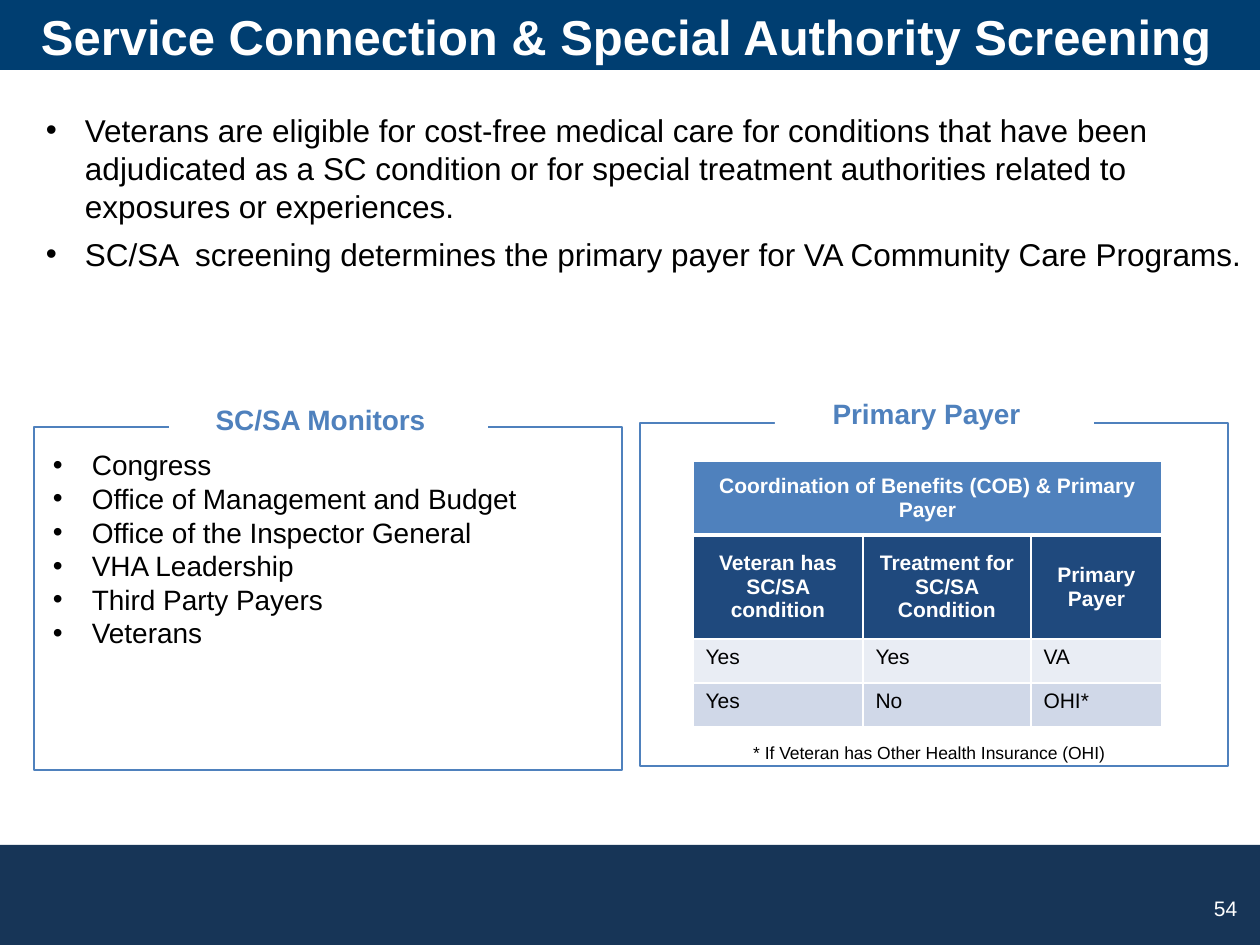
import pptx
import pptx.util
import pptx.dml.color
import pptx.enum.shapes
import pptx.enum.text
import pptx.oxml
import pptx.oxml.ns

RGB = pptx.dml.color.RGBColor
ALIGN = pptx.enum.text.PP_ALIGN
ANCHOR = pptx.enum.text.MSO_ANCHOR
WHITE, BLACK = RGB(255, 255, 255), RGB(0, 0, 0)
TITLE_BLUE = RGB(0x00, 0x3E, 0x71)
FOOTER_BLUE = RGB(0x17, 0x35, 0x57)
ACCENT = RGB(0x4F, 0x81, 0xBD)
DARK_BLUE = RGB(0x1F, 0x49, 0x7D)
PALE, PALER = RGB(0xD0, 0xD8, 0xE8), RGB(0xE9, 0xED, 0xF4)

TITLE = "Service Connection & Special Authority Screening"
INTRO = [
    "Veterans are eligible for cost-free medical care for conditions that have been "
    "adjudicated as a SC condition or for special treatment authorities related to "
    "exposures or experiences.",
    "SC/SA  screening determines the primary payer for VA Community Care Programs.",
]
MONITORS = ["Congress", "Office of Management and Budget", "Office of the Inspector General",
            "VHA Leadership", "Third Party Payers", "Veterans"]
PAYER_ROWS = [
    ["Coordination of Benefits (COB) & Primary Payer", "", ""],
    ["Veteran has SC/SA condition", "Treatment for SC/SA Condition", "Primary Payer"],
    ["Yes", "Yes", "VA"],
    ["Yes", "No", "OHI*"],
]
ROW_FILLS = [ACCENT, DARK_BLUE, PALER, PALE]
ROW_HEIGHTS = [74, 104, 44, 44]
COLUMN_WIDTHS = [170, 168, 131]
FOOTNOTE = "* If Veteran has Other Health Insurance (OHI)"
PAGE_NUMBER = "54"

# heading, frame left and top, heading left and top
PANELS = [("SC/SA Monitors", 34, 427, 169, 397),
          ("Primary Payer", 640, 423, 775, 391)]
FRAME_SIZE = (588, 343)
HEADING_SIZE = (319, 47)

SLIDE_W, SLIDE_H = 1260, 945
HANGING = 39
INSETS = (13, 6, 13, 6)


def px(length):
    return pptx.util.Emu(round(length * 914400 / 126))


def place(part, *box):
    part.left, part.top, part.width, part.height = map(px, box)


def add_bullet(paragraph):
    properties = paragraph._p.get_or_add_pPr()
    properties.set("marL", str(px(HANGING)))
    properties.set("indent", str(-px(HANGING)))
    for tag, key, value in (("buFont", "typeface", "Arial"), ("buChar", "char", "•")):
        pptx.oxml.ns.qn("a:" + tag)
        properties.append(pptx.oxml.parse_xml(
            f'<a:{tag} {pptx.oxml.ns.nsdecls("a")} {key}="{value}"/>'))


def write(frame, lines, size, color=BLACK, bold=False, align=ALIGN.LEFT,
          anchor=ANCHOR.TOP, insets=INSETS, bullets=False, after=0):
    settings = {"word_wrap": True, "vertical_anchor": anchor,
                "auto_size": pptx.enum.text.MSO_AUTO_SIZE.NONE}
    sides = ("margin_left", "margin_top", "margin_right", "margin_bottom")
    settings.update(zip(sides, map(px, insets)))
    for key, value in settings.items():
        setattr(frame, key, value)
    for i, line in enumerate(lines):
        paragraph = frame.paragraphs[0] if i == 0 else frame.add_paragraph()
        paragraph.text = line
        paragraph.alignment = align
        paragraph.space_before = pptx.util.Pt(0)
        paragraph.space_after = pptx.util.Pt(after)
        if bullets:
            add_bullet(paragraph)
        font = paragraph.runs[0].font
        font.color.rgb = color
        for key, value in {"name": "Arial", "size": pptx.util.Pt(size), "bold": bold}.items():
            setattr(font, key, value)


def add_rectangle(slide, box, fill=None, line=None):
    shape = slide.shapes.add_shape(pptx.enum.shapes.MSO_SHAPE.RECTANGLE, *map(px, box))
    shape.shadow.inherit = False
    if fill is None:
        shape.fill.background()
    else:
        shape.fill.solid()
        shape.fill.fore_color.rgb = fill
    if line is None:
        shape.line.fill.background()
    else:
        shape.line.color.rgb = line
        shape.line.width = pptx.util.Pt(1.5)
    return shape


def add_text(slide, box, lines, size, **options):
    write(slide.shapes.add_textbox(*map(px, box)).text_frame, lines, size, **options)


def add_borders(cell, widths):
    """Draw white left, right, top and bottom borders with widths in points."""
    for side, width in zip("LRTB", widths):
        cell._tc.get_or_add_tcPr().append(pptx.oxml.parse_xml(
            f'<a:ln{side} {pptx.oxml.ns.nsdecls("a")} w="{pptx.util.Pt(width)}">'
            f'<a:solidFill><a:srgbClr val="{WHITE}"/></a:solidFill></a:ln{side}>'))


def add_payer_table(slide, left, top):
    box = (left, top, sum(COLUMN_WIDTHS), sum(ROW_HEIGHTS))
    table = slide.shapes.add_table(len(ROW_HEIGHTS), len(COLUMN_WIDTHS), *map(px, box)).table
    for column, width in zip(table.columns, COLUMN_WIDTHS):
        column.width = px(width)
    for r, (texts, fill, height) in enumerate(zip(PAYER_ROWS, ROW_FILLS, ROW_HEIGHTS)):
        table.rows[r].height = px(height)
        heading = r < 2
        for c, text in enumerate(texts):
            cell = table.cell(r, c)
            add_borders(cell, (1, 1, 3 if r == 1 else 1, 3 if r == 0 else 1))
            cell.fill.solid()
            cell.fill.fore_color.rgb = fill
            if text:
                write(cell.text_frame, [text], 12, WHITE if heading else BLACK, heading,
                      ALIGN.CENTER if heading else ALIGN.LEFT)
            cell.vertical_anchor = ANCHOR.MIDDLE if heading else ANCHOR.TOP
    table.cell(0, 0).merge(table.cell(0, len(COLUMN_WIDTHS) - 1))


def main():
    deck = pptx.Presentation()
    deck.slide_width, deck.slide_height = px(SLIDE_W), px(SLIDE_H)
    slide = deck.slides.add_slide(deck.slide_layouts[1])

    for top, height, color in ((0, 70, TITLE_BLUE), (845, 100, FOOTER_BLUE)):
        band = add_rectangle(slide, (0, top, SLIDE_W, height), fill=color)
        slide.shapes._spTree.insert(2, band._element)  # behind the title

    title, intro = slide.shapes.title, slide.placeholders[1]
    place(title, -9, 6, 1270, 42)
    write(title.text_frame, [TITLE], 28, WHITE, True, ALIGN.CENTER, insets=(0, 0, 0, 0))
    place(intro, 33, 105, 1229, 176)
    write(intro.text_frame, INTRO, 18, bullets=True, after=6)

    for heading, left, top, heading_left, heading_top in PANELS:
        add_rectangle(slide, (left, top, *FRAME_SIZE), line=ACCENT)
        label = add_rectangle(slide, (heading_left, heading_top, *HEADING_SIZE), fill=WHITE)
        write(label.text_frame, [heading], 16, ACCENT, True, ALIGN.CENTER,
              insets=(13, 6, 29, 6))

    add_text(slide, (40, 442, 568, 255), MONITORS, 16, bullets=True)
    add_payer_table(slide, 693, 461)
    add_text(slide, (719, 736, 420, 34), [FOOTNOTE], 10, align=ALIGN.CENTER)
    add_text(slide, (1211, 896, 40, 38), [PAGE_NUMBER], 12, color=WHITE, insets=(3, 0, 0, 0))
    deck.save("out.pptx")


if __name__ == "__main__":
    main()
